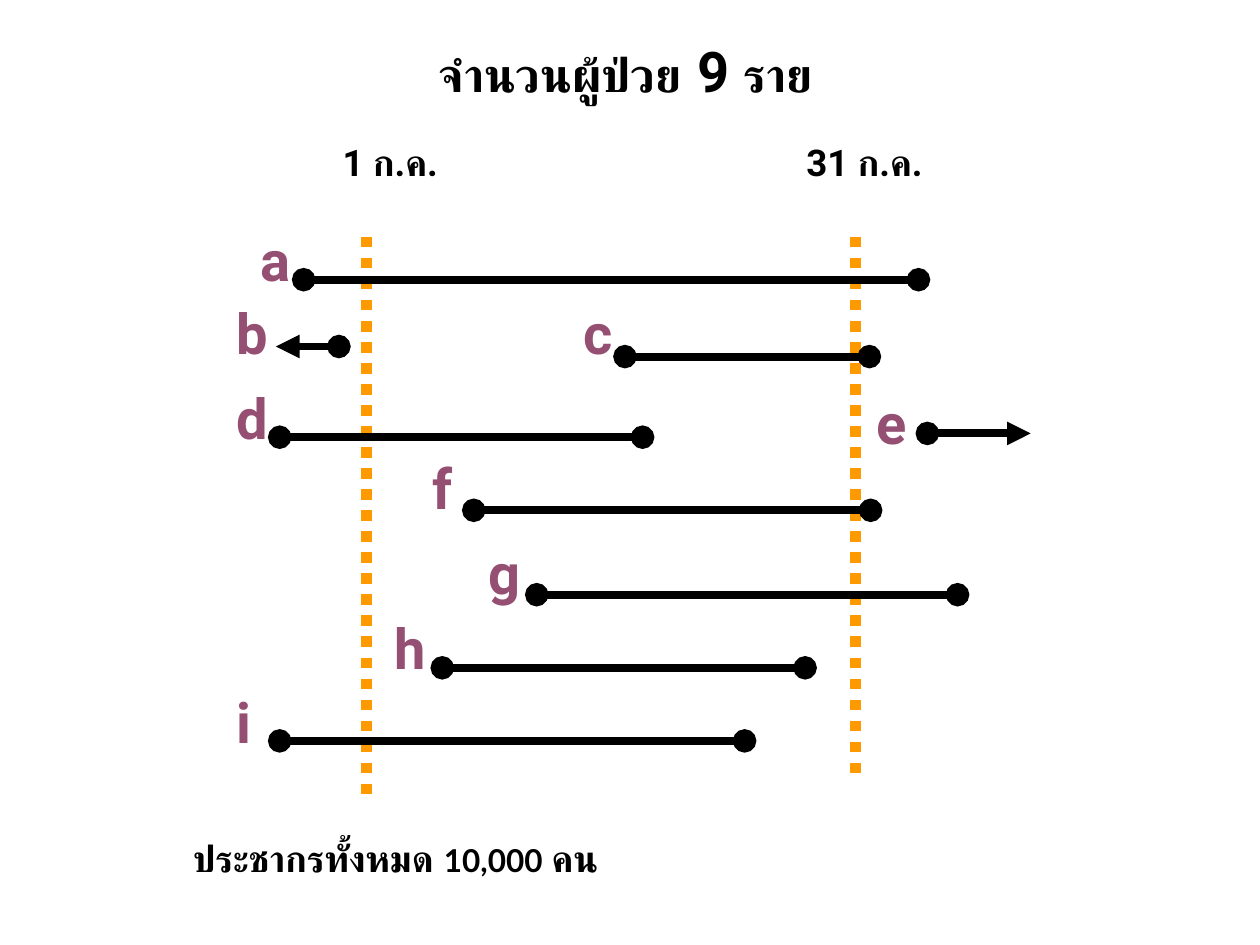
from lxml import etree
from pptx import Presentation
from pptx.dml.color import RGBColor
from pptx.enum.dml import MSO_LINE
from pptx.enum.shapes import MSO_CONNECTOR
from pptx.enum.text import MSO_ANCHOR, MSO_AUTO_SIZE, PP_ALIGN
from pptx.oxml.ns import qn
from pptx.util import Inches, Pt

COLORS = {"text": "000000", "case": "954F72", "month": "FF9900"}

# Text as runs of (wording, size)
TITLE = [("จำนวนผู้ป่วย", 27), (" 9 ", 32), ("ราย", 27)]
POPULATION = [("ประชากรทั้งหมด ", 21), ("10,000", 18), (" คน", 21)]

# Month limits: label, label left, line x, line bottom
MONTH_LIMITS = [("1 ก.ค.", 2.65, 2.91, 6.3), ("31 ก.ค.", 6.33, 6.79, 6.22)]
MONTH_TOP = 1.88

# Cases: letter, (left, top, width) of letter, line start x, end x, y, end mark
CASES = [
    ("a", (2, 1.75, 0.38), 2.41, 7.29, 2.22, "oval"),
    ("b", (1.81, 2.33, 0.47), 2.69, 2.19, 2.75, "triangle"),
    ("c", (4.56, 2.33, 0.44), 4.96, 6.9, 2.83, "oval"),
    ("d", (1.81, 3, 0.47), 2.22, 5.1, 3.47, "oval"),
    ("e", (6.89, 3.04, 0.29), 7.36, 8.18, 3.44, "triangle"),
    ("f", (3.36, 3.56, 0.32), 3.76, 6.91, 4.05, "oval"),
    ("g", (3.81, 4.23, 0.31), 4.26, 7.6, 4.72, "oval"),
    ("h", (3.06, 4.83, 0.48), 3.51, 6.39, 5.3, "oval"),
    ("i", (1.81, 5.42, 0.31), 2.22, 5.91, 5.88, "oval"),
]

FRAME_FORMAT = {
    "margin_left": Inches(0.07), "margin_right": Inches(0.07),
    "margin_top": Inches(0.04), "margin_bottom": Inches(0.04),
    "word_wrap": True, "auto_size": MSO_AUTO_SIZE.SHAPE_TO_FIT_TEXT,
    "vertical_anchor": MSO_ANCHOR.TOP,
}


def set_attributes(target, values):
    for name, value in values.items():
        setattr(target, name, value)


def write_text(shape, runs, font="Roboto", color="text", align=PP_ALIGN.LEFT):
    set_attributes(shape.text_frame, FRAME_FORMAT)
    paragraph = shape.text_frame.paragraphs[0]
    paragraph.alignment = align
    for wording, size in runs:
        run = paragraph.add_run()
        run.text = wording
        set_attributes(run.font, {"name": font, "size": Pt(size), "bold": True})
        run.font.color.rgb = RGBColor.from_string(COLORS[color])


def add_text(slide, box, runs, **style):
    shape = slide.shapes.add_textbox(*map(Inches, box))
    write_text(shape, runs, **style)


def add_line(slide, start, end, color, width):
    connector = slide.shapes.add_connector(
        MSO_CONNECTOR.STRAIGHT, *map(Inches, start + end))
    connector.line.color.rgb = RGBColor.from_string(COLORS[color])
    connector.line.width = Pt(width)
    etree.SubElement(connector._element.spPr, qn("a:effectLst"))
    return connector


def add_line_ends(connector, head, tail):
    line = connector.line._get_or_add_ln()
    for tag, kind in (("a:headEnd", head), ("a:tailEnd", tail)):
        etree.SubElement(line, qn(tag), type=kind)


def main():
    presentation = Presentation()
    presentation.slide_width = Inches(10)
    presentation.slide_height = Inches(7.5)
    slide = presentation.slides.add_slide(presentation.slide_layouts[5])

    # Title
    title = slide.shapes.title
    set_attributes(title, {"left": Inches(2.81), "top": Inches(0.25),
                           "width": Inches(4.31), "height": Inches(0.61)})
    write_text(title, TITLE, align=PP_ALIGN.CENTER)

    # First and last day of the month
    for label, label_left, x, bottom in MONTH_LIMITS:
        add_text(slide, (label_left, 1.07, 1.3, 0.43), [(label, 21)])
        limit = add_line(slide, (x, MONTH_TOP), (x, bottom), "month", 6)
        limit.line.dash_style = MSO_LINE.ROUND_DOT

    # Duration of each case
    for letter, (left, top, width), start, end, y, mark in CASES:
        duration = add_line(slide, (start, y), (end, y), "text", 4.5)
        add_line_ends(duration, "oval", mark)
        add_text(slide, (left, top, width, 0.61), [(letter, 32)], color="case")

    # Population
    add_text(slide, (1.46, 6.59, 3.81, 0.43), POPULATION, font="Lato")

    presentation.save("out.pptx")


if __name__ == "__main__":
    main()
